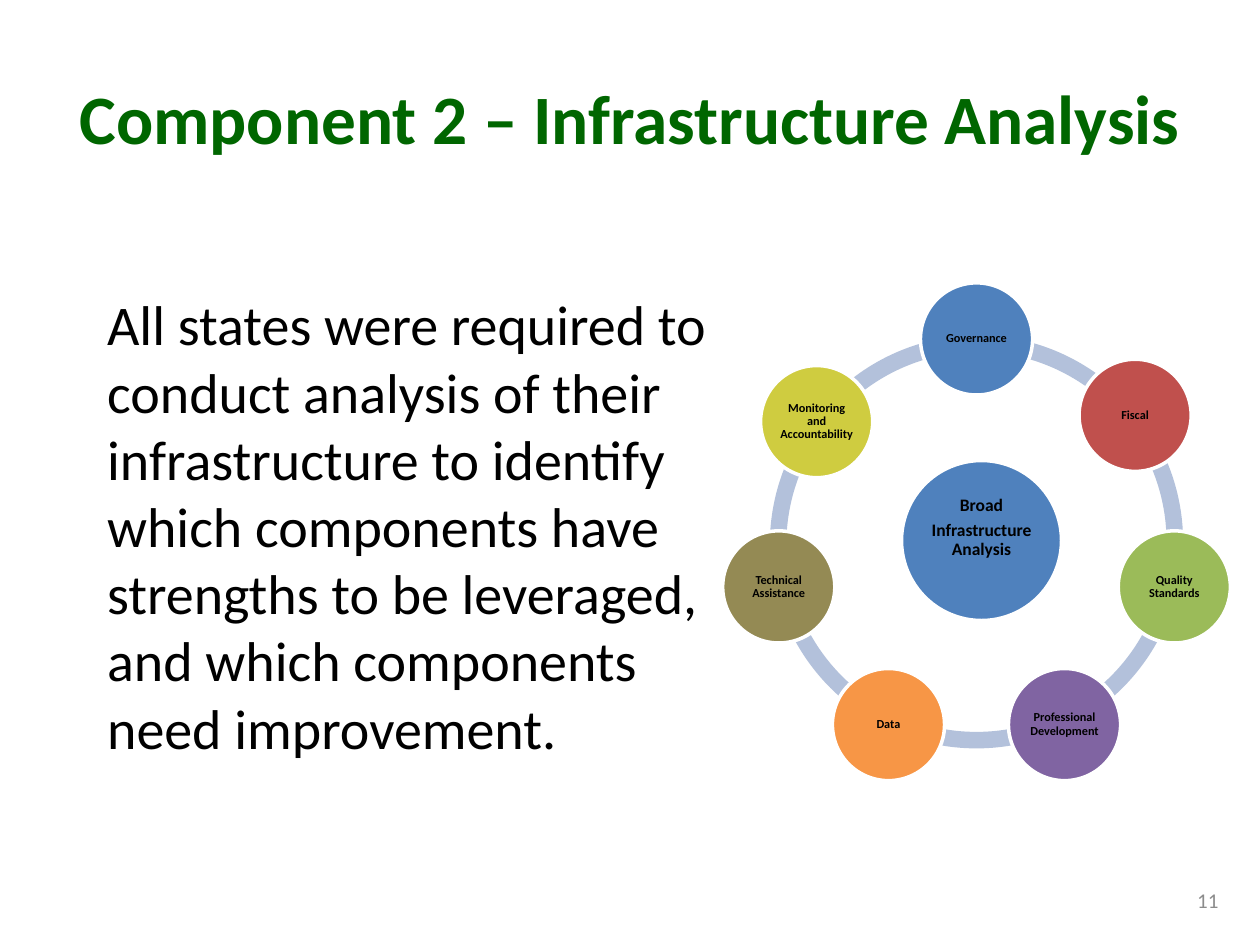
from math import cos, pi, sin

from pptx import Presentation
from pptx.dml.color import RGBColor
from pptx.enum.shapes import MSO_SHAPE
from pptx.enum.text import MSO_ANCHOR, MSO_AUTO_SIZE, PP_ALIGN
from pptx.util import Inches, Pt

ARC, ELLIPSE = MSO_SHAPE.BLOCK_ARC, MSO_SHAPE.OVAL
LEFT, CENTER, RIGHT = PP_ALIGN.LEFT, PP_ALIGN.CENTER, PP_ALIGN.RIGHT
TOP, MIDDLE, BOTTOM = MSO_ANCHOR.TOP, MSO_ANCHOR.MIDDLE, MSO_ANCHOR.BOTTOM
NO_FIT = MSO_AUTO_SIZE.NONE


def write(box, lines, size, color, bold, align, anchor, spacing, margins=None):
    frame = box.text_frame
    settings = {"word_wrap": True, "auto_size": NO_FIT, "vertical_anchor": anchor}
    for side, margin in (margins or {}).items():
        settings["margin_" + side] = Inches(margin)
    for name, value in settings.items():
        setattr(frame, name, value)
    for number, line in enumerate(lines):
        para = frame.paragraphs[0] if number == 0 else frame.add_paragraph()
        for name, value in {"alignment": align, **spacing}.items():
            setattr(para, name, value)
        span = para.add_run()
        span.text = line
        font_format = {"name": "Calibri", "size": Pt(size), "bold": bold}
        for name, value in font_format.items():
            setattr(span.font, name, value)
        span.font.color.rgb = RGBColor.from_string(color)


def add_round(kind, center_x, center_y, diameter, color, outlined):
    corner = (center_x - diameter / 2, center_y - diameter / 2)
    box = page.shapes.add_shape(kind, *map(Inches, (*corner, diameter, diameter)))
    box.shadow.inherit = False
    box.fill.solid()
    box.fill.fore_color.rgb = RGBColor.from_string(color)
    if outlined:
        box.line.color.rgb = RGBColor.from_string("FFFFFF")
        box.line.width = Pt(2)
    else:
        box.line.fill.background()
    return box


deck = Presentation()
deck.slide_width, deck.slide_height = Inches(10), Inches(7.5)
page = deck.slides.add_slide(deck.slide_layouts[1])

title, body = page.placeholders
places = [(title, (0.5, 0.3, 9, 1.25)), (body, (0.75, 2.25, 5.08, 4.59))]
for box, place in places:
    for name, value in zip(("left", "top", "width", "height"), place):
        setattr(box, name, Inches(value))

write(title, ["Component 2 – Infrastructure Analysis"], 39.6, "006600", True,
      CENTER, MIDDLE, {})
write(body, ["All states were required to conduct analysis of their infrastructure "
             "to identify which components have strengths to be leveraged, "
             "and which components need improvement."],
      32, "000000", False, LEFT, TOP, {"space_before": Pt(6.4)})
properties = body.text_frame.paragraphs[0]._p.get_or_add_pPr()
for name in ("marL", "indent"):
    properties.set(name, "0")
bullet = properties.makeelement(
    "{http://schemas.openxmlformats.org/drawingml/2006/main}buNone", {})
properties.append(bullet)

RING_X, RING_Y, RING_RADIUS = 7.75, 4.3, 1.61
ARC_SIZE, NODE_SIZE, HUB_SIZE = 3.28, 0.89, 1.27
DEGREE = 0.6
INSETS = dict.fromkeys(("left", "top", "right", "bottom"), 0.01)
SPACING = {"line_spacing": 0.9, "space_after": Pt(3.5)}

# name, fill, shift of the node, shift of the arc that follows it
nodes = [
    ("Governance", "4F81BD", (0, 0), (0, 0)),
    ("Fiscal", "C0504D", (0, 0), (0, 0)),
    ("Quality Standards", "9BBB59", (0, 0), (0, 0)),
    ("Professional Development", "8064A2", (0, 0), (0, 0)),
    ("Data", "F79646", (0, 0), (0, 0)),
    ("Technical Assistance", "948A54", (0, 0), (0, 0.02)),
    ("Monitoring and Accountability", "CFCC40", (-0.01, 0.05), (0.02, 0)),
]
step = 360 / len(nodes)

for number, (name, color, node_shift, (right, down)) in enumerate(nodes):
    arc = add_round(ARC, RING_X + right, RING_Y + down, ARC_SIZE, "B3C1DB", False)
    start = 270 + number * step
    arc.adjustments[0] = start % 360 * DEGREE
    arc.adjustments[1] = (start + step) % 360 * DEGREE
    arc.adjustments[2] = 0.04

hub = add_round(ELLIPSE, 7.79, 4.29, HUB_SIZE, "4F81BD", True)
write(hub, ["Broad", "Infrastructure Analysis"], 10, "000000", True,
      CENTER, MIDDLE, SPACING, {**INSETS, "bottom": 0.21})

for number, (name, color, (right, down), arc_shift) in enumerate(nodes):
    angle = (270 + number * step) * pi / 180
    node = add_round(ELLIPSE, RING_X + RING_RADIUS * cos(angle) + right,
                     RING_Y + RING_RADIUS * sin(angle) + down,
                     NODE_SIZE, color, True)
    write(node, [name], 7, "000000", True, CENTER, MIDDLE,
          {"line_spacing": 0.9}, INSETS)

page_number = page.shapes.add_textbox(*map(Inches, (9.25, 6.99, 0.49, 0.3)))
write(page_number, ["11"], 12, "8C8C8C", False, RIGHT, BOTTOM, {}, {"right": 0.07})

deck.save("out.pptx")
